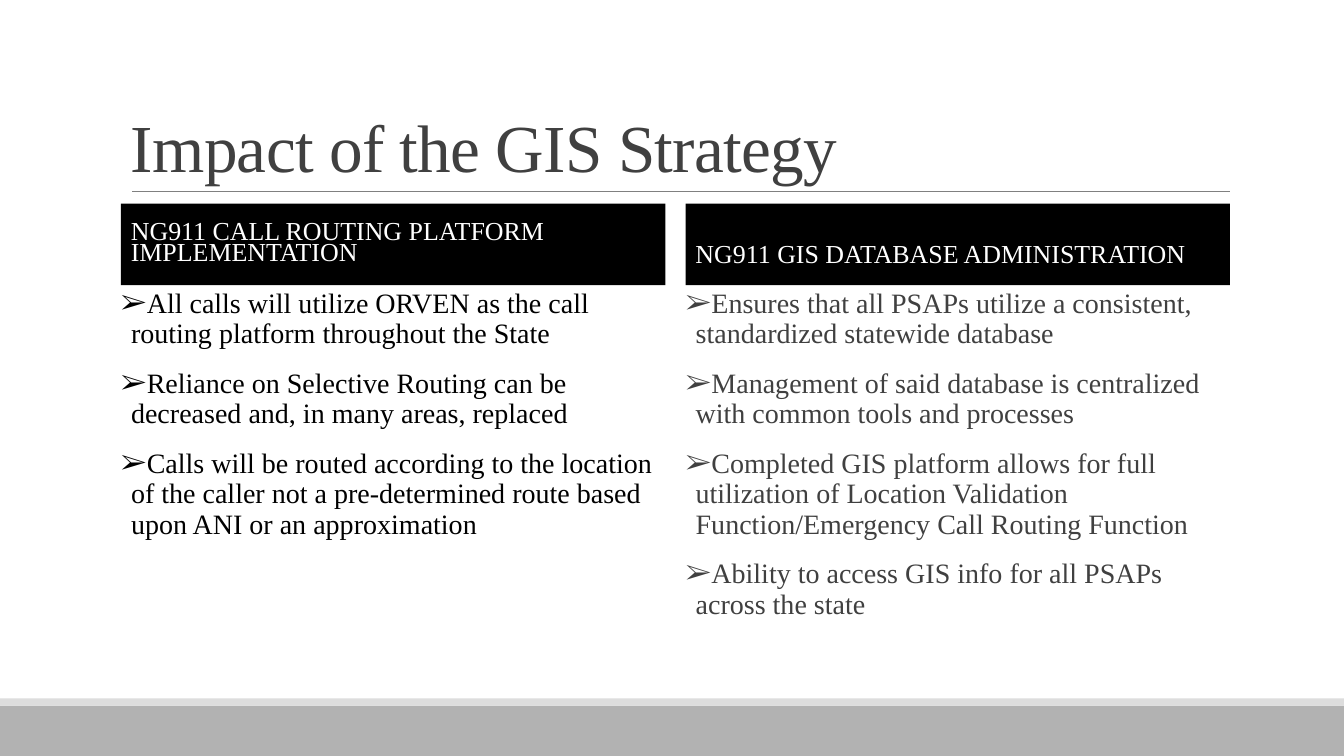
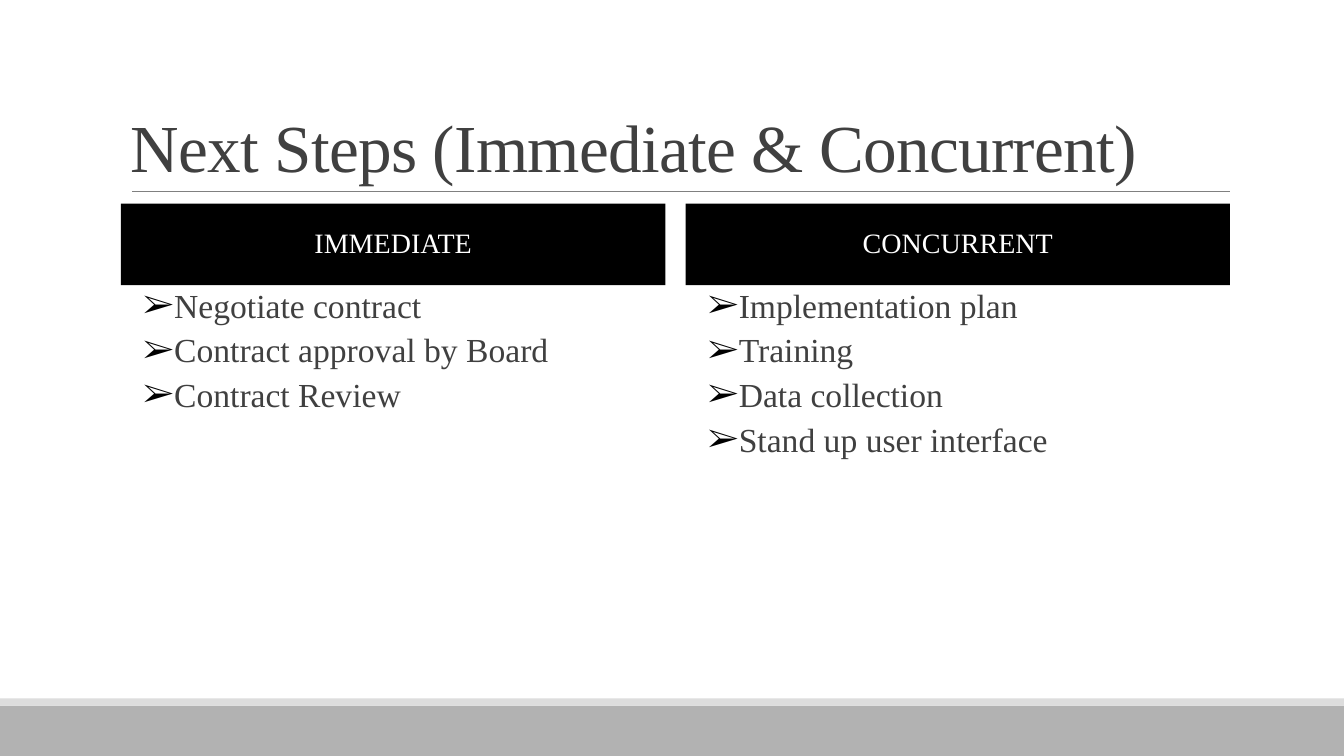
"""Build two slides on the GIS strategy, each with a title and two headed lists."""
from dataclasses import dataclass

from lxml import etree
from pptx import Presentation
from pptx import util as u
from pptx.dml.color import RGBColor
from pptx.enum import shapes, text
from pptx.oxml import ns


@dataclass(frozen=True)
class Theme:
    font: str = "Times New Roman"
    black: str = "000000"
    white: str = "FFFFFF"
    ink: str = "404040"
    rule: str = "808080"
    band: str = "B2B2B2"
    strip: str = "DDDDDD"
    title: float = 48
    item: float = 24
    body: float = 20
    heading: float = 18.5


theme = Theme()
WIDTH, HEIGHT = 13.33, 7.5
LEFT, COLUMN, GAP = 1.2, 5.4, 0.2
HEAD_TOP, HEAD_HEIGHT = 2.02, 0.81
LIST_TOP, LIST_HEIGHT = 2.82, 3.69
RULE_TOP, TITLE_TOP, PAD = 1.9, 0.31, 0.11
BAND_TOP, STRIP_TOP = 7, 6.93


def add_block(page, area, fill=None):
    left, top, width, height = (u.Inches(length) for length in area)
    if fill is None:
        return page.shapes.add_textbox(left, top, width, height)
    block = page.shapes.add_shape(shapes.MSO_SHAPE.RECTANGLE, left, top, width, height)
    block.shadow.inherit = False
    block.fill.solid()
    block.fill.fore_color.rgb = RGBColor.from_string(fill)
    block.line.fill.background()
    return block


def write(box, lines, size, color, anchor=text.MSO_ANCHOR.TOP, align=text.PP_ALIGN.LEFT,
          leading=0.9, before=0, after=0, insets=(0.1, 0.05), top=0.05,
          tracking=None, indent=None, bullet_color=None):
    frame = box.text_frame
    frame.word_wrap = True
    frame.vertical_anchor = anchor
    frame.margin_left = frame.margin_right = u.Inches(insets[0])
    frame.margin_top, frame.margin_bottom = u.Inches(top), u.Inches(insets[1])
    for number, line in enumerate(lines):
        para = frame.add_paragraph() if number else frame.paragraphs[0]
        para.alignment, para.line_spacing = align, leading
        para.space_before, para.space_after = u.Pt(before), u.Pt(after)
        span = para.add_run()
        span.text = line
        span.font.name, span.font.size = theme.font, u.Pt(size)
        span.font.color.rgb = RGBColor.from_string(color)
        if tracking:
            span.font._element.set("spc", str(int(tracking * 100)))
        if indent:
            props = para._p.get_or_add_pPr()
            props.set("marL", str(u.Inches(indent[0])))
            props.set("indent", str(u.Inches(indent[1])))
            tint = etree.SubElement(props, ns.qn("a:buClr"))
            etree.SubElement(tint, ns.qn("a:srgbClr"), val=bullet_color or color)
            etree.SubElement(props, ns.qn("a:buFont"), typeface=theme.font)
            etree.SubElement(props, ns.qn("a:buChar"), char="➢")


statement = dict(size=theme.body, before=12, after=2, indent=(0.1, -0.1))
step = dict(size=theme.item, color=theme.ink, before=2, after=4,
            indent=(0.42, -0.2), bullet_color=theme.black)
long_heading = dict(size=theme.heading, leading=0.7)
short_heading = dict(size=theme.body, align=text.PP_ALIGN.CENTER)

slides = [
    ("Impact of the GIS Strategy", [
        ("NG911 CALL ROUTING PLATFORM IMPLEMENTATION", long_heading, [
            "All calls will utilize ORVEN as the call routing platform throughout the State",
            "Reliance on Selective Routing can be decreased and, in many areas, replaced",
            "Calls will be routed according to the location of the caller not a "
            "pre-determined route based upon ANI or an approximation",
        ], dict(statement, color=theme.black)),
        ("NG911 GIS DATABASE ADMINISTRATION", dict(long_heading, top=0.3), [
            "Ensures that all PSAPs utilize a consistent, standardized statewide database",
            "Management of said database is centralized with common tools and processes",
            "Completed GIS platform allows for full utilization of Location Validation "
            "Function/Emergency Call Routing Function",
            "Ability to access GIS info for all PSAPs across the state",
        ], dict(statement, color=theme.ink)),
    ]),
    ("Next Steps (Immediate & Concurrent)", [
        ("IMMEDIATE", short_heading,
         ["Negotiate contract", "Contract approval by Board", "Contract Review"], step),
        ("CONCURRENT", short_heading,
         ["Implementation plan", "Training", "Data collection", "Stand up user interface"],
         step),
    ]),
]

deck = Presentation()
deck.slide_width, deck.slide_height = u.Inches(WIDTH), u.Inches(HEIGHT)

for title, columns in slides:
    page = deck.slides.add_slide(deck.slide_layouts[6])
    add_block(page, (0, BAND_TOP, WIDTH, HEIGHT - BAND_TOP), theme.band)
    add_block(page, (0, STRIP_TOP, WIDTH, BAND_TOP - STRIP_TOP), theme.strip)

    right = LEFT + 2 * COLUMN + GAP
    rule = page.shapes.add_connector(
        shapes.MSO_CONNECTOR.STRAIGHT, u.Inches(LEFT + PAD), u.Inches(RULE_TOP),
        u.Inches(right), u.Inches(RULE_TOP))
    rule.line.color.rgb = RGBColor.from_string(theme.rule)
    rule.line.width = u.Pt(0.5)
    etree.SubElement(rule._element.spPr, ns.qn("a:effectLst"))

    title_box = add_block(page, (LEFT, TITLE_TOP, right - LEFT, RULE_TOP - TITLE_TOP))
    write(title_box, [title], theme.title, theme.ink, anchor=text.MSO_ANCHOR.BOTTOM,
          leading=0.85, tracking=-0.5)

    for index, (heading, heading_style, items, item_style) in enumerate(columns):
        left = LEFT + index * (COLUMN + GAP)
        heading_box = add_block(page, (left, HEAD_TOP, COLUMN, HEAD_HEIGHT), theme.black)
        write(heading_box, [heading], color=theme.white, anchor=text.MSO_ANCHOR.MIDDLE,
              before=12, after=2, **heading_style)
        list_box = add_block(page, (left, LIST_TOP, COLUMN, LIST_HEIGHT))
        write(list_box, items, insets=(0, 0.05), **item_style)

deck.save("out.pptx")
